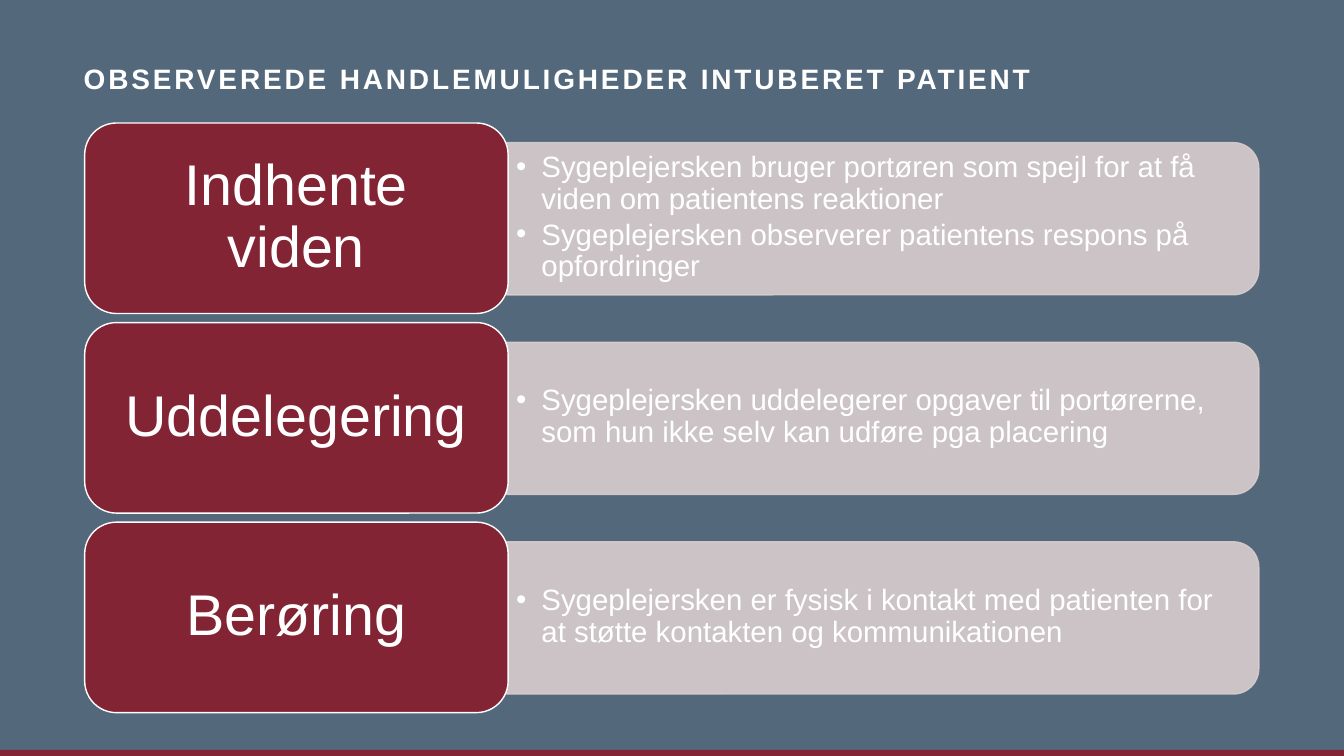
from lxml.etree import SubElement
from pptx import Presentation
from pptx.dml.color import RGBColor
from pptx.enum.shapes import MSO_SHAPE
from pptx.enum.text import MSO_ANCHOR, MSO_AUTO_SIZE, PP_ALIGN
from pptx.oxml.ns import qn
from pptx.util import Pt

PX = 9144  # EMU per px, 100 px to the inch
SLATE = RGBColor(0x54, 0x68, 0x7C)
WINE = RGBColor(0x82, 0x24, 0x33)
ROSE = RGBColor(0xD8, 0xCD, 0xCE)
WHITE = RGBColor(0xFF, 0xFF, 0xFF)

ROWS = [
    ("Indhente viden", [
        "Sygeplejersken bruger portøren som spejl for at få viden om patientens reaktioner",
        "Sygeplejersken observerer patientens respons på opfordringer"]),
    ("Uddelegering", [
        "Sygeplejersken uddelegerer opgaver til portørerne, som hun ikke selv kan udføre pga placering"]),
    ("Berøring", [
        "Sygeplejersken er fysisk i kontakt med patienten for at støtte kontakten og kommunikationen"]),
]
ROW_TOP, ROW_STEP = 122, 198
CARD_X, CARD_W, CARD_H = 84, 420, 189
PANEL_X, PANEL_W, PANEL_H = 503, 746, 151


def add_box(kind, x, y, w, h, fill, line=None):
    sp = s.shapes.add_shape(kind, x * PX, y * PX, w * PX, h * PX)
    sp.shadow.inherit = False
    sp.fill.solid()
    sp.fill.fore_color.rgb = fill
    if line is None:
        sp.line.fill.background()
    else:
        sp.line.color.rgb = line
        sp.line.width = Pt(1)
    return sp


def set_text(tf, paragraphs, size, anchor, margins, bold=False, align=PP_ALIGN.LEFT, bullet=False):
    tf.word_wrap = True
    tf.auto_size = MSO_AUTO_SIZE.NONE
    tf.vertical_anchor = anchor
    tf.margin_left = tf.margin_right = margins[0] * PX
    tf.margin_top = tf.margin_bottom = margins[1] * PX
    for i, text in enumerate(paragraphs):
        p = tf.add_paragraph() if i else tf.paragraphs[0]
        if bullet:
            p.level = 1
            pPr = p._p.get_or_add_pPr()
            pPr.set("marL", str(25 * PX))
            pPr.set("indent", str(-25 * PX))
            SubElement(pPr, qn("a:buFont"), typeface="Arial")
            SubElement(pPr, qn("a:buChar"), char="•")
            p.space_after = Pt(3)
        p.alignment = align
        p.line_spacing = 0.9
        r = p.add_run()
        r.text = text
        r.font.name = "Arial"
        r.font.size = Pt(size)
        r.font.bold = bold
        r.font.color.rgb = WHITE


prs = Presentation()
prs.slide_width, prs.slide_height = 1333 * PX, 750 * PX
s = prs.slides.add_slide(prs.slide_layouts[5])

# Background and bottom bar
s.background.fill.solid()
s.background.fill.fore_color.rgb = SLATE
add_box(MSO_SHAPE.RECTANGLE, 0, 744, 1333, 6, WINE)

# Title
title = s.shapes.title
title.left, title.top, title.width, title.height = 83 * PX, 39 * PX, 1165 * PX, 56 * PX
set_text(title.text_frame, ["OBSERVEREDE HANDLEMULIGHEDER INTUBERET PATIENT"],
         20, MSO_ANCHOR.BOTTOM, (0, 0), bold=True)
title.text_frame.paragraphs[0].runs[0].font._element.set("spc", "200")

# Rows: panel behind, its bullets, and the heading card in front
for i, (heading, points) in enumerate(ROWS):
    top = ROW_TOP + i * ROW_STEP
    middle = top + CARD_H / 2

    # The panel is upright and turned a quarter, so its rounded end faces right
    panel = add_box(MSO_SHAPE.ROUND_2_SAME_RECTANGLE,
                    PANEL_X + (PANEL_W - PANEL_H) // 2, round(middle - PANEL_W / 2),
                    PANEL_H, PANEL_W, ROSE, ROSE)
    panel.rotation = 90
    for color in panel._element.spPr.iter(qn("a:srgbClr")):
        SubElement(color, qn("a:alpha"), val="90000")

    bullets = s.shapes.add_textbox(PANEL_X * PX, (top + 26) * PX, 738 * PX, 136 * PX)
    set_text(bullets.text_frame, points, 21, MSO_ANCHOR.MIDDLE, (9, 4), bullet=True)

    card = add_box(MSO_SHAPE.ROUNDED_RECTANGLE, CARD_X, top, CARD_W, CARD_H, WINE, WHITE)
    set_text(card.text_frame, [heading], 41, MSO_ANCHOR.MIDDLE, (17, 9), align=PP_ALIGN.CENTER)

prs.save("out.pptx")
